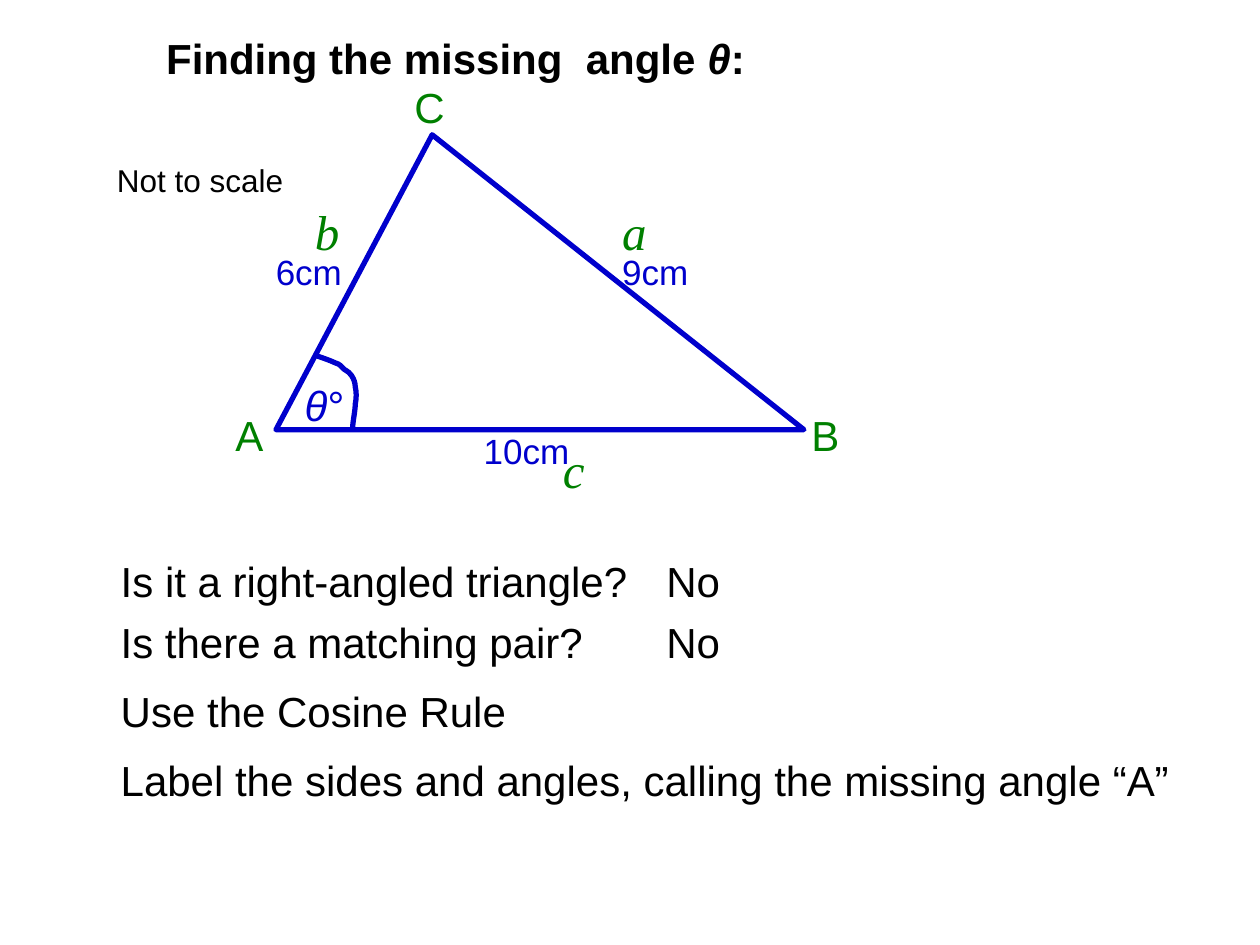
from lxml.etree import SubElement
from pptx import Presentation
from pptx.dml.color import RGBColor
from pptx.enum.text import MSO_AUTO_SIZE as AutoSize
from pptx.oxml.ns import qn
from pptx.util import Inches, Pt

BLACK, GREEN, BLUE = "000000", "008000", "0000CC"

STYLES = {
    "body": {"size": 24, "name": "Arial", "color": BLACK},
    "title": {"size": 24, "name": "Arial", "color": BLACK, "bold": True},
    "note": {"size": 18, "name": "Arial", "color": BLACK},
    "vertex": {"size": 24, "name": "Arial", "color": GREEN},
    "side": {"size": 28, "name": "Times New Roman", "color": GREEN, "italic": True},
    "length": {"size": 20, "name": "Arial", "color": BLUE},
    "angle": {"size": 24, "name": "Arial", "color": BLUE},
}
HEIGHTS = {18: 0.4, 20: 0.43, 24: 0.5, 28: 0.57}

QUESTIONS = [
    ("Is it a right-angled triangle?", 4.36, 4.82),
    ("Is there a matching pair?", 4.84, 4.56),
]
STEPS = [
    ("Use the Cosine Rule", 5.39, 4.31),
    ("Label the sides and angles, calling the missing angle “A”", 5.94, 8.83),
]
TEXT_LEFT, ANSWER_LEFT, ANSWER_WIDTH = 0.86, 5.19, 0.86

LABELS = [
    ("side", ["a"], 4.84, 1.55, 0.47),
    ("length", ["9cm"], 4.84, 1.94, 0.87),
    ("length", ["6cm"], 2.09, 1.94, 1.02),
    ("vertex", ["A"], 1.77, 3.2, 0.47),
    ("vertex", ["C"], 3.19, 0.6, 0.47),
    ("vertex", ["B"], 6.34, 3.2, 0.42),
    ("side", ["b"], 2.4, 1.55, 0.47),
    ("side", ["c"], 4.37, 3.44, 0.63),
    ("length", ["10cm"], 3.74, 3.36, 1.1),
    ("angle", ["θ", "°"], 2.32, 2.96, 1.02),
    ("title", ["Finding the missing  angle ", "θ", ":"], 1.22, 0.21, 5.12),
    ("note", ["Not to scale"], 0.83, 1.23, 1.81),
]

TRIANGLE = [(2.19, 3.41), (3.43, 1.07), (6.38, 3.41)]
ANGLE_ARC = [
    (2.5, 2.82),
    (2.53, 2.83), (2.62, 2.86), (2.66, 2.88),
    (2.7, 2.89), (2.71, 2.91), (2.73, 2.93),
    (2.76, 2.95), (2.78, 2.96), (2.79, 2.98),
    (2.81, 3.01), (2.82, 3.04), (2.82, 3.07),
    (2.83, 3.11), (2.83, 3.16), (2.82, 3.21),
    (2.82, 3.26), (2.8, 3.35), (2.8, 3.39),
]


def rgb(value):
    return RGBColor.from_string(value)


def add_text(page, style, pieces, left, top, width):
    look = dict(STYLES[style])
    color, size = look.pop("color"), look.pop("size")
    box = page.shapes.add_textbox(
        *map(Inches, (left, top, width, HEIGHTS[size])))
    frame = box.text_frame
    frame.word_wrap = True
    frame.auto_size = AutoSize.SHAPE_TO_FIT_TEXT
    para = frame.paragraphs[0]
    for piece in pieces:
        span = para.add_run()
        span.text = piece
        span.font.size = Pt(size)
        span.font.color.rgb = rgb(color)
        for key, value in look.items():
            setattr(span.font, key, value)
        if piece == "θ":
            span.font.italic = True


def add_outline(page, points, close):
    start, *rest = [(Inches(x), Inches(y)) for x, y in points]
    builder = page.shapes.build_freeform(*start)
    builder.add_line_segments(rest, close=close)
    outline = builder.convert_to_shape()
    outline.shadow.inherit = False
    outline.fill.background()
    outline.line.color.rgb = rgb(BLUE)
    outline.line.width = Pt(3)
    return outline


def bend(outline):
    route = next(outline.element.iter(qn("a:path")))
    segments = route.findall(qn("a:lnTo"))
    for first in range(0, len(segments), 3):
        curve = SubElement(route, qn("a:cubicBezTo"))
        for segment in segments[first:first + 3]:
            curve.append(segment[0])
            route.remove(segment)


def main():
    deck = Presentation()
    deck.slide_width, deck.slide_height = Inches(10), Inches(7.5)
    page = deck.slides.add_slide(deck.slide_layouts[6])
    add_outline(page, TRIANGLE, close=True)
    bend(add_outline(page, ANGLE_ARC, close=False))
    for text, top, width in QUESTIONS + STEPS:
        add_text(page, "body", [text], TEXT_LEFT, top, width)
    for _, top, _ in QUESTIONS:
        add_text(page, "body", ["No"], ANSWER_LEFT, top, ANSWER_WIDTH)
    for label in LABELS:
        add_text(page, *label)
    deck.save("out.pptx")


if __name__ == "__main__":
    main()
